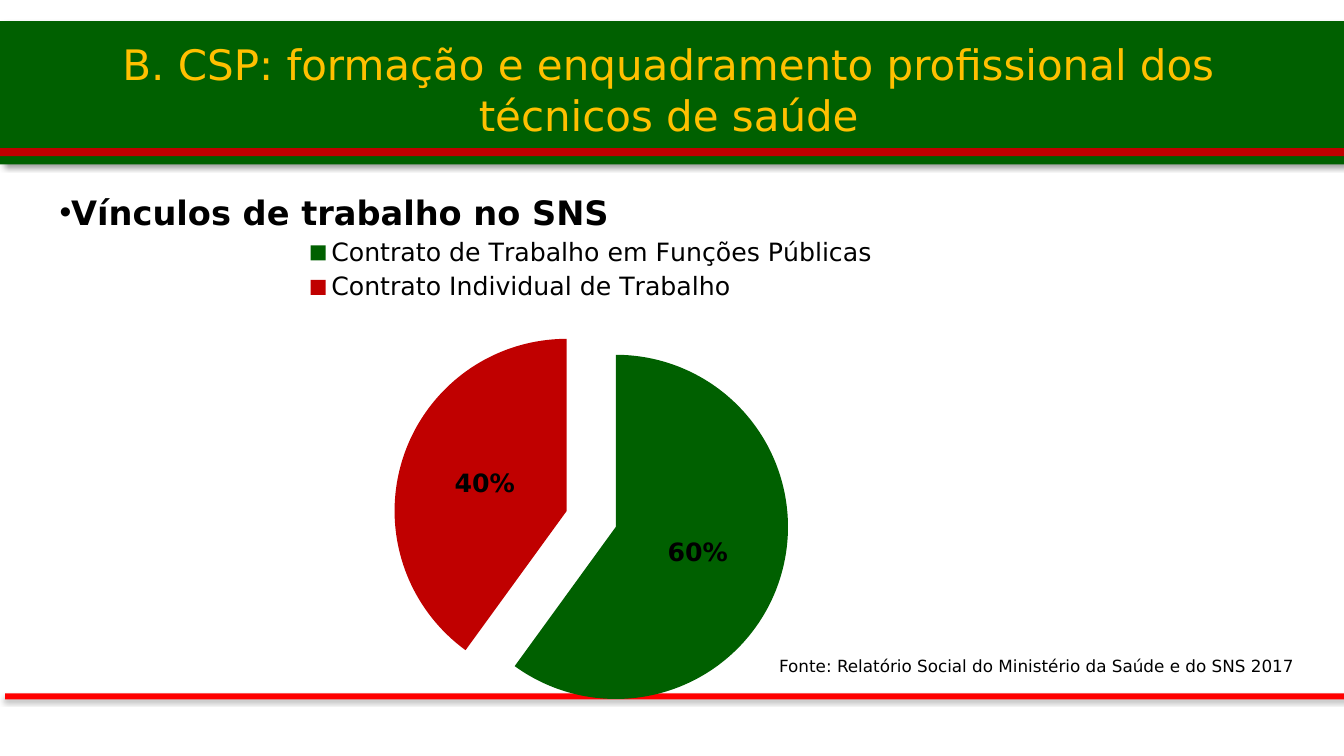
from lxml import etree
from pptx import Presentation, util as u
from pptx.chart.data import CategoryChartData
from pptx.dml.color import RGBColor
from pptx.enum import chart as ch, shapes, text
from pptx.oxml import parse_xml
from pptx.oxml.ns import nsdecls, qn

W, H = 13.33, 7.5
FONT = "DejaVu Sans"
GREEN, RED, BRIGHT, GOLD, BLACK = "006000", "C00000", "FF0000", "FFC000", "000000"


def rgb(value):
    """Turn a hex string into a colour."""
    return RGBColor.from_string(value)


def inches(*values):
    """Turn numbers into inch lengths."""
    return [u.Inches(v) for v in values]


def style(font, color=BLACK, **formats):
    """Set the font's name, colour and further formats."""
    for name, value in {"name": FONT, **formats}.items():
        setattr(font, name, value)
    font.color.rgb = rgb(color)


def add_bar(s, box, color, shadow=None):
    """Draw a band, with an optional (alpha, blur, distance, angle) shadow."""
    sp = s.shapes.add_shape(shapes.MSO_SHAPE.RECTANGLE, *inches(*box))
    sp.shadow.inherit = False
    sp.fill.solid()
    sp.fill.fore_color.rgb = rgb(color)
    sp.line.fill.background()
    if shadow:
        alpha, blur, dist, angle = shadow
        effects = sp._element.spPr.find(qn("a:effectLst"))
        effects.append(parse_xml(
            f'<a:outerShdw {nsdecls("a")} blurRad="{u.Pt(blur)}" dist="{u.Pt(dist)}" '
            f'dir="{angle * 60000}" algn="tl" rotWithShape="0"><a:srgbClr val="{BLACK}">'
            f'<a:alpha val="{alpha * 1000}"/></a:srgbClr></a:outerShdw>'))


def add_text(s, box, words, size, color=BLACK, bold=False, bullet=False,
             align=text.PP_ALIGN.LEFT, anchor=text.MSO_ANCHOR.TOP, margins=(0.12, 0.06)):
    """Place one paragraph in a wrapping text box."""
    tf = s.shapes.add_textbox(*inches(*box)).text_frame
    side, edge = inches(*margins)
    for name, value in dict(word_wrap=True, vertical_anchor=anchor, margin_left=side,
                            margin_right=side, margin_top=edge, margin_bottom=edge).items():
        setattr(tf, name, value)
    p = tf.paragraphs[0]
    p.alignment = align
    if bullet:
        pPr = p._p.get_or_add_pPr()
        pPr.set("marL", "0")
        pPr.set("indent", str(-u.Inches(0.38)))
        etree.SubElement(pPr, qn("a:buFont")).set("typeface", "Arial")
        etree.SubElement(pPr, qn("a:buChar")).set("char", "•")
    r = p.add_run()
    r.text = words
    style(r.font, color, size=u.Pt(size), bold=bold)


def add_header(s, x, y, w, h):
    """Draw the title band with its red stripe and title."""
    add_bar(s, (x, y, w, h), GREEN, (40, 4, 3, 45))
    add_bar(s, (x, y + 1.26, w, 0.08), RED)
    add_text(s, (x + 0.44, y + 0.09, w - 0.94, 1.17),
             "B. CSP: formação e enquadramento profissional dos técnicos de saúde", 30, GOLD,
             align=text.PP_ALIGN.CENTER, anchor=text.MSO_ANCHOR.MIDDLE)


def add_contracts_pie(s, x, y, w, h):
    """Draw the exploded pie of contract types."""
    data = CategoryChartData(number_format="General")
    data.categories = ["Contrato de Trabalho em Funções Públicas", "Contrato Individual de Trabalho"]
    data.add_series("Series 1", (60, 40))
    chart = s.shapes.add_chart(ch.XL_CHART_TYPE.PIE_EXPLODED, *inches(x, y, w, h), data).chart
    style(chart.font, size=u.Pt(18))
    chart.has_title = False
    chart.has_legend = True
    chart.legend.position = ch.XL_LEGEND_POSITION.TOP
    chart.legend.include_in_layout = False
    plot = chart.plots[0]
    plot.vary_by_categories = True
    series = plot.series[0]
    series._element.find(qn("c:explosion")).set("val", "15")
    for i, color in enumerate((GREEN, RED)):
        fill = series.points[i].format.fill
        fill.solid()
        fill.fore_color.rgb = rgb(color)
    plot.has_data_labels = True
    labels = plot.data_labels
    for name, value in dict(show_percentage=True, show_value=False, number_format="0%",
                            number_format_is_linked=False,
                            position=ch.XL_LABEL_POSITION.CENTER).items():
        setattr(labels, name, value)
    style(labels.font, size=u.Pt(18), bold=True)


def add_body(s, x, y, w, h):
    """Place the heading, pie and source line."""
    add_text(s, (x, y, w, 0.82), "Vínculos de trabalho no SNS", 24, bold=True, bullet=True,
             align=text.PP_ALIGN.JUSTIFY)
    add_contracts_pie(s, x + 1.43, y + 0.4, 7.93, h - 0.4)
    add_text(s, (x + 7.16, y + 4.62, 5.44, 0.3),
             "Fonte: Relatório Social do Ministério da Saúde e do SNS 2017", 12,
             margins=(0.1, 0.05))


def main():
    """Build and save the slide."""
    prs = Presentation()
    prs.slide_width, prs.slide_height = inches(W, H)
    s = prs.slides.add_slide(prs.slide_layouts[6])
    add_header(s, 0, 0.21, W, 1.42)
    add_bar(s, (0.05, 6.88, W, 0.06), BRIGHT, (35, 3.1, 1.8, 90))
    add_body(s, 0.47, 1.84, 12.39, 5.41)
    prs.save("out.pptx")


if __name__ == "__main__":
    main()
